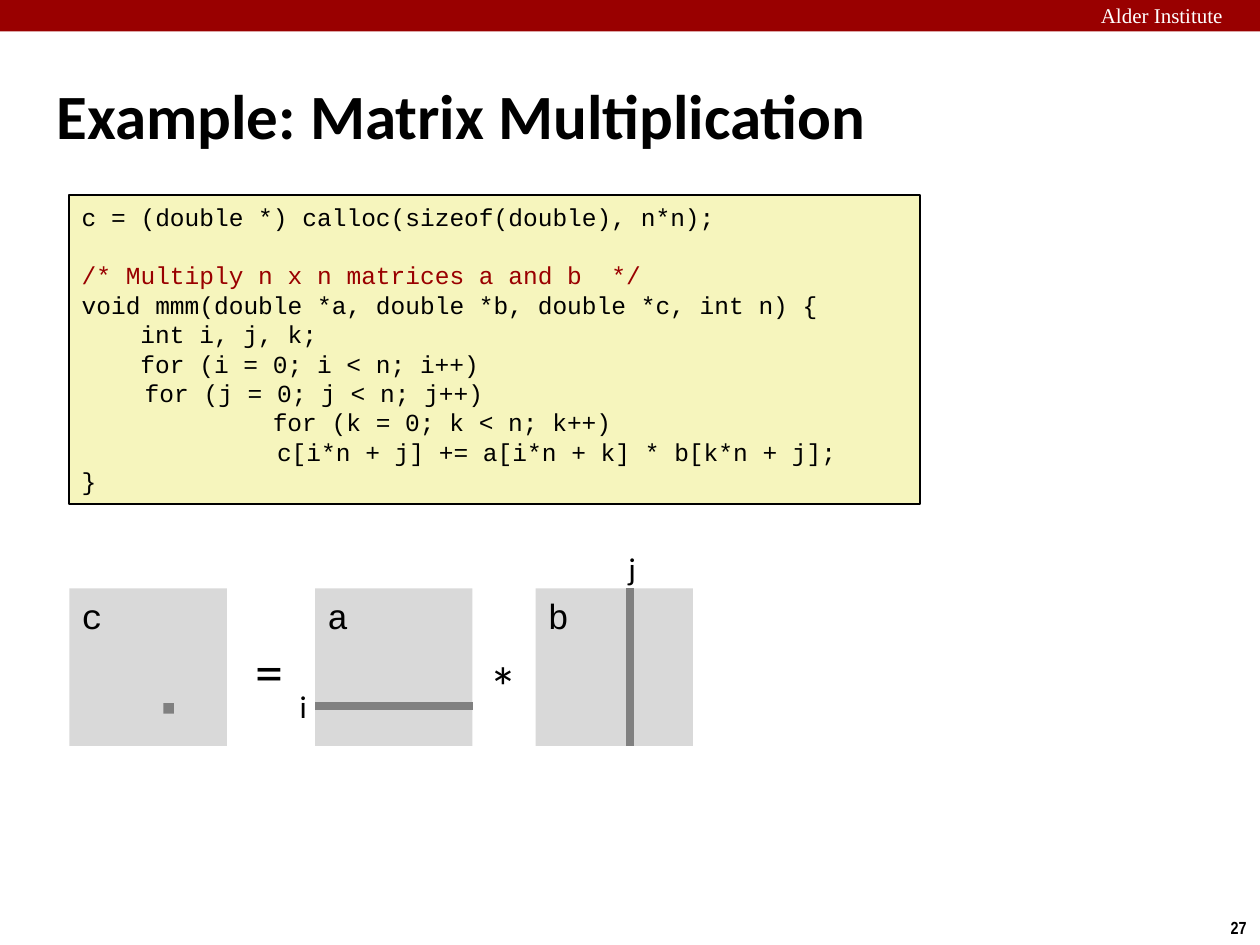
from lxml.etree import SubElement
from pptx import Presentation
from pptx.dml.color import RGBColor
from pptx.enum.shapes import MSO_CONNECTOR, MSO_SHAPE
from pptx.enum.text import MSO_ANCHOR, PP_ALIGN
from pptx.oxml.ns import qn
from pptx.util import Pt

COLORS = {
    "band": "990000", "white": "FFFFFF", "black": "000000",
    "matrix": "D9D9D9", "mark": "808080", "code": "F6F5BD",
}
TITLE = "Example: Matrix Multiplication"
CODE_LINES = [
    ("c = (double *) calloc(sizeof(double), n*n);", 0, 0, "black"),
    ("/* Multiply n x n matrices a and b  */", 0, 1, "band"),
    ("void mmm(double *a, double *b, double *c, int n) {", 0, 0, "black"),
    ("int i, j, k;", 33.6, 0, "black"),
    ("for (i = 0; i < n; i++)", 33.6, 0, "black"),
    ("for (j = 0; j < n; j++)", 36, 0, "black"),
    ("for (k = 0; k < n; k++)", 109.2, 0, "black"),
    ("c[i*n + j] += a[i*n + k] * b[k*n + j];", 111.6, 0, "black"),
    ("}", 0, 0, "black"),
]
LINE_HEIGHT = 16.8
MATRIX_SIZE, MATRIX_TOP = 90, 336.2
MATRIX_LEFTS = {"a": 180, "b": 306, "c": 39.6}
ROW_Y, COLUMN_X = 403.2, 360

CODE_FONT = {"name": "Courier New", "size": Pt(14)}
MATRIX_FONT = {"name": "Courier New", "size": Pt(20)}
INDEX_FONT = {"name": "Calibri", "size": Pt(18)}
OPERATOR_FONT = {"name": "Calibri", "size": Pt(32)}
TITLE_FONT = {"name": "Calibri", "size": Pt(36), "bold": True}
HEADER_FONT = {"name": "Times New Roman", "size": Pt(12)}
NUMBER_FONT = {"name": "Arial Narrow", "size": Pt(10), "bold": True}

LABELS = [
    ("Alder Institute", (622, -2.2, 103, 21.6), HEADER_FONT, "white"),
    ("27", (696.2, 520.6, 24.5, 19.4), NUMBER_FONT, "black"),
    ("i", (164.2, 388.8, 18.7, 28.8), INDEX_FONT, "black"),
    ("j", (352, 310.3, 19.4, 28.8), INDEX_FONT, "black"),
    ("*", (272.9, 368.6, 31, 46), OPERATOR_FONT, "black"),
    ("=", (139, 360, 31, 46), OPERATOR_FONT, "black"),
]


def color(name):
    return RGBColor.from_string(COLORS[name])


def write(paragraph, text, font_format, color_name):
    paragraph.alignment = PP_ALIGN.LEFT
    run = paragraph.add_run()
    run.text = text
    for attribute, value in font_format.items():
        setattr(run.font, attribute, value)
    run.font.color.rgb = color(color_name)


def add_rectangle(slide, box, fill):
    shape = slide.shapes.add_shape(MSO_SHAPE.RECTANGLE, *map(Pt, box))
    shape.shadow.inherit = False
    shape.fill.solid()
    shape.fill.fore_color.rgb = color(fill)
    shape.line.fill.background()
    shape.text_frame.vertical_anchor = MSO_ANCHOR.TOP
    return shape


def add_mark(slide, *ends):
    connector = slide.shapes.add_connector(MSO_CONNECTOR.STRAIGHT, *map(Pt, ends))
    connector.line.color.rgb = color("mark")
    connector.line.width = Pt(4.5)
    SubElement(connector._element.spPr, qn("a:effectLst"))


def add_label(slide, text, box, font_format, color_name):
    shape = slide.shapes.add_textbox(*map(Pt, box))
    shape.text_frame.word_wrap = False
    write(shape.text_frame.paragraphs[0], text, font_format, color_name)


def add_title(slide):
    title = slide.shapes.title
    box = {"left": 25.2, "top": 35.3, "width": 597.6, "height": 59.8}
    for attribute, value in box.items():
        setattr(title, attribute, Pt(value))
    title.text_frame.vertical_anchor = MSO_ANCHOR.MIDDLE
    write(title.text_frame.paragraphs[0], TITLE, TITLE_FONT, "black")


def add_code(slide):
    shape = add_rectangle(slide, (39.6, 111.6, 486, 176.4), "code")
    shape.line.color.rgb = color("black")
    shape.line.width = Pt(1)
    frame = shape.text_frame
    frame.word_wrap = True
    for index, (text, indent, lines_before, color_name) in enumerate(CODE_LINES):
        paragraph = frame.add_paragraph() if index else frame.paragraphs[0]
        paragraph.line_spacing = Pt(LINE_HEIGHT)
        paragraph.space_before = Pt(lines_before * LINE_HEIGHT)
        paragraph._p.get_or_add_pPr().set("marL", str(Pt(indent)))
        write(paragraph, text, CODE_FONT, color_name)


def add_matrices(slide):
    for name, left in MATRIX_LEFTS.items():
        shape = add_rectangle(slide, (left, MATRIX_TOP, MATRIX_SIZE, MATRIX_SIZE), "matrix")
        write(shape.text_frame.paragraphs[0], name, MATRIX_FONT, "black")
    add_mark(slide, MATRIX_LEFTS["a"], ROW_Y, MATRIX_LEFTS["a"] + MATRIX_SIZE, ROW_Y)
    add_mark(slide, COLUMN_X, MATRIX_TOP, COLUMN_X, MATRIX_TOP + MATRIX_SIZE)
    add_rectangle(slide, (93.4, 401.8, 6, 6), "mark")


def main():
    presentation = Presentation()
    presentation.slide_width, presentation.slide_height = Pt(720), Pt(540)
    slide = presentation.slides.add_slide(presentation.slide_layouts[5])
    add_rectangle(slide, (0, 0, 720, 18), "band")
    add_title(slide)
    add_matrices(slide)
    for label in LABELS:
        add_label(slide, *label)
    add_code(slide)
    presentation.save("out.pptx")


if __name__ == "__main__":
    main()
